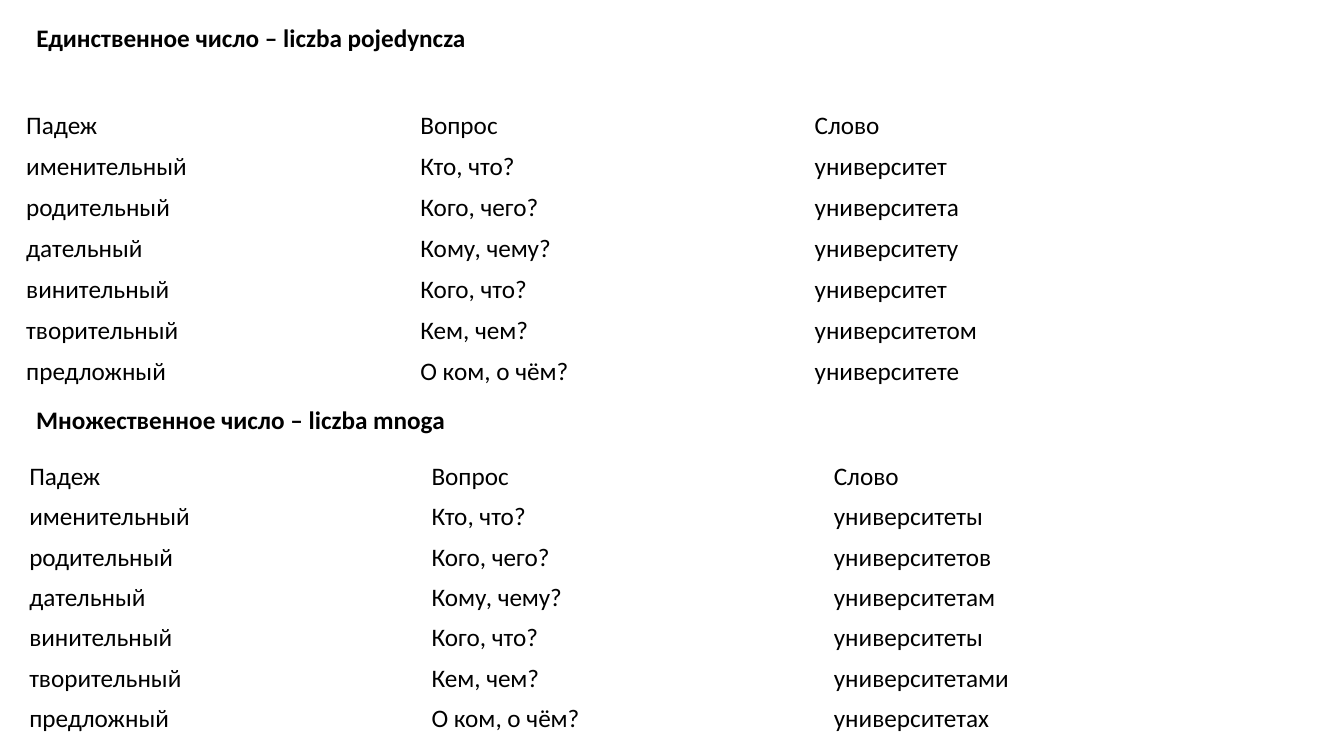
from dataclasses import dataclass

from pptx import Presentation
from pptx.dml.color import RGBColor
from pptx.enum.text import MSO_ANCHOR, MSO_AUTO_SIZE, PP_ALIGN
from pptx.slide import Slide
from pptx.text.text import TextFrame
from pptx.util import Inches, Pt

COLORS = {"text": "000000"}
FONT = "Calibri"
ROW_HEIGHT = 0.4
HEADING_LEFT, HEADING_HEIGHT = 0.26, 0.4

HEADER = ("Падеж", "Вопрос", "Слово")
CASES = (
    ("именительный", "Кто, что?"),
    ("родительный", "Кого, чего?"),
    ("дательный", "Кому, чему?"),
    ("винительный", "Кого, что?"),
    ("творительный", "Кем, чем?"),
    ("предложный", "О ком, о чём?"),
)


@dataclass(frozen=True)
class Declension:
    heading: str
    heading_top: float
    heading_width: float
    left: float
    top: float
    column_width: float
    cell_margin: float
    words: tuple[str, ...]


SINGULAR = Declension(
    "Единственное число – liczba pojedyncza", 0.17, 7.62,
    0.16, 1.05, 3.91, 0.05,
    ("университет", "университета", "университету",
     "университет", "университетом", "университете"),
)
PLURAL = Declension(
    "Множественное число – liczba mnoga", 3.96, 7.75,
    0.19, 4.53, 3.99, 0.04,
    ("университеты", "университетов", "университетам",
     "университеты", "университетами", "университетах"),
)


def write(frame: TextFrame, text: str, *, size: float = 18, bold: bool = False,
          color: str = "text", anchor: MSO_ANCHOR = MSO_ANCHOR.TOP) -> None:
    frame.word_wrap = True
    frame.vertical_anchor = anchor
    paragraph = frame.paragraphs[0]
    paragraph.alignment = PP_ALIGN.LEFT
    run = paragraph.add_run()
    run.text = text
    run.font.name = FONT
    run.font.size = Pt(size)
    run.font.bold = bold
    run.font.color.rgb = RGBColor.from_string(COLORS[color])


def add_heading(slide: Slide, declension: Declension, *, is_title: bool) -> None:
    place = [Inches(length) for length in (
        HEADING_LEFT, declension.heading_top, declension.heading_width, HEADING_HEIGHT)]
    if is_title:
        heading = slide.shapes.title
        heading.left, heading.top, heading.width, heading.height = place
    else:
        heading = slide.shapes.add_textbox(*place)
    heading.text_frame.auto_size = MSO_AUTO_SIZE.NONE
    write(heading.text_frame, declension.heading, bold=True)


def add_declension_table(slide: Slide, declension: Declension) -> None:
    rows = [HEADER] + [(*case, word) for case, word in zip(CASES, declension.words)]
    table = slide.shapes.add_table(
        len(rows), len(HEADER), Inches(declension.left), Inches(declension.top),
        Inches(declension.column_width * len(HEADER)), Inches(ROW_HEIGHT * len(rows)),
    ).table
    table.first_row = False
    table.horz_banding = False
    for row_index, row in enumerate(rows):
        for column_index, text in enumerate(row):
            cell = table.cell(row_index, column_index)
            cell.fill.background()
            cell.margin_top = cell.margin_bottom = Inches(declension.cell_margin)
            cell.vertical_anchor = MSO_ANCHOR.MIDDLE
            write(cell.text_frame, text, anchor=MSO_ANCHOR.MIDDLE)


def main() -> None:
    presentation = Presentation()
    presentation.slide_width = Inches(13.33)
    presentation.slide_height = Inches(7.5)
    slide = presentation.slides.add_slide(presentation.slide_layouts.get_by_name("Title Only"))
    for declension in (SINGULAR, PLURAL):
        add_declension_table(slide, declension)
        add_heading(slide, declension, is_title=declension is SINGULAR)
    presentation.save("out.pptx")


if __name__ == "__main__":
    main()
